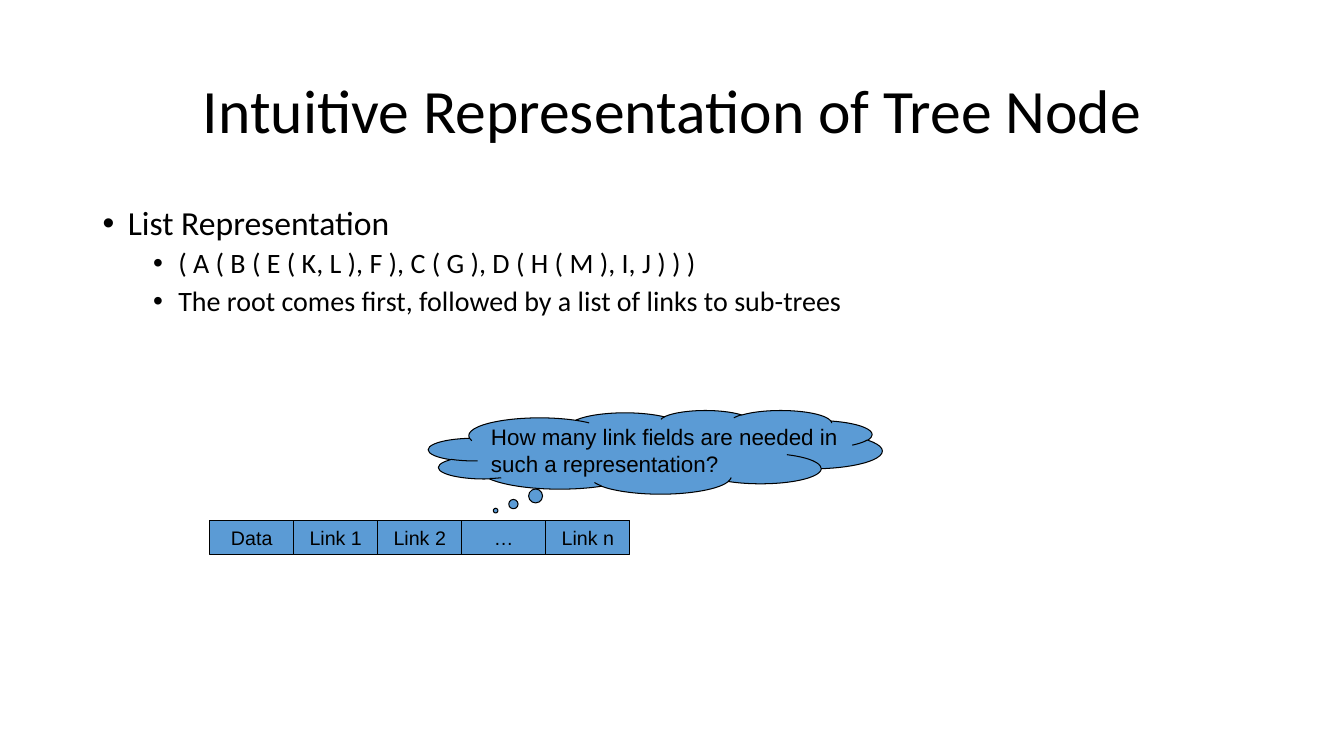
from pptx import Presentation
from pptx.dml.color import RGBColor
from pptx.enum.shapes import MSO_SHAPE
from pptx.enum.text import MSO_ANCHOR, PP_ALIGN
from pptx.oxml import parse_xml
from pptx.oxml.ns import nsdecls
from pptx.util import Inches, Pt


def color(hex_code):
    """Turn a hex string into a colour."""
    return RGBColor.from_string(hex_code)


def write(paragraph, text, font="Calibri", size=14, ink="000000", align=PP_ALIGN.LEFT,
          line_spacing=1.0, before=0):
    """Put formatted text into a paragraph."""
    paragraph.alignment = align
    paragraph.line_spacing = line_spacing
    paragraph.space_before = Pt(before)
    run = paragraph.add_run()
    run.text = text
    run.font.name = font
    run.font.size = Pt(size)
    run.font.color.rgb = color(ink)


class NodeSlide:
    """Hold the style and the current slide."""

    fill = "5B9BD5"
    outline = "000000"
    label_font = "Arial"

    def __init__(self, presentation):
        """Add a title-only slide."""
        self.slide = presentation.slides.add_slide(presentation.slide_layouts[5])

    def title(self, text, left, top, width, height):
        """Place and format the title."""
        heading = self.slide.shapes.title
        heading.left, heading.top = Inches(left), Inches(top)
        heading.width, heading.height = Inches(width), Inches(height)
        heading.text_frame.vertical_anchor = MSO_ANCHOR.MIDDLE
        write(heading.text_frame.paragraphs[0], text, size=44,
              align=PP_ALIGN.CENTER, line_spacing=0.9)

    def bullets(self, items, left, top, width, height):
        """Add a bulleted list of (level, text) items."""
        frame = self.slide.shapes.add_textbox(
            Inches(left), Inches(top), Inches(width), Inches(height)).text_frame
        frame.word_wrap = True
        for index, (level, text) in enumerate(items):
            item = frame.add_paragraph() if index else frame.paragraphs[0]
            item.level = level
            write(item, text, size=24 - 4 * level, line_spacing=0.9, before=10 - 5 * level)
            properties = item._p.get_or_add_pPr()
            properties.set("marL", str(Inches(0.25 + 0.5 * level)))
            properties.set("indent", str(Inches(-0.25)))
            properties.append(parse_xml(f'<a:buFont {nsdecls("a")} typeface="Arial"/>'))
            properties.append(parse_xml(f'<a:buChar {nsdecls("a")} char="•"/>'))

    def box(self, preset, lines, left, top, width, height, size, align):
        """Add an outlined shape with text lines."""
        shape = self.slide.shapes.add_shape(
            preset, Inches(left), Inches(top), Inches(width), Inches(height))
        shape.shadow.inherit = False
        shape.fill.solid()
        shape.fill.fore_color.rgb = color(self.fill)
        shape.line.color.rgb = color(self.outline)
        shape.line.width = Pt(0.75)
        frame = shape.text_frame
        frame.vertical_anchor = MSO_ANCHOR.MIDDLE
        for index, text in enumerate(lines):
            line = frame.add_paragraph() if index else frame.paragraphs[0]
            write(line, text, font=self.label_font, size=size, align=align)
        return shape

    def thought(self, lines, left, top, width, height, tail):
        """Add a thought cloud whose tail points to an offset."""
        cloud = self.box(MSO_SHAPE.CLOUD_CALLOUT, lines, left, top, width, height,
                         16, PP_ALIGN.LEFT)
        cloud.adjustments[0], cloud.adjustments[1] = tail
        frame = cloud.text_frame
        frame.word_wrap = False
        frame.margin_left = frame.margin_right = frame.margin_top = frame.margin_bottom = 0

    def fields(self, labels, left, top, width, height):
        """Add a row of adjoining node fields."""
        for index, label in enumerate(labels):
            self.box(MSO_SHAPE.RECTANGLE, [label], left + index * width, top, width, height,
                     14, PP_ALIGN.CENTER)


def main():
    """Build and save the slide."""
    presentation = Presentation()
    presentation.slide_width, presentation.slide_height = Inches(13.33), Inches(7.5)
    node = NodeSlide(presentation)
    node.title("Intuitive Representation of Tree Node", 0.92, 0.4, 11.5, 1.45)
    node.bullets([
        (0, "List Representation"),
        (1, "( A ( B ( E ( K, L ), F ), C ( G ), D ( H ( M ), I, J ) ) )"),
        (1, "The root comes first, followed by a list of links to sub-trees"),
    ], 0.92, 2, 11.5, 4.76)
    node.thought(["How many link fields are needed in", "such a representation?"],
                 4.25, 4.07, 4.5, 0.83, (-0.352, 0.7))
    node.fields(["Data", "Link 1", "Link 2", "…", "Link n"], 2.08, 5.16, 5 / 6, 0.34)
    presentation.save("out.pptx")


if __name__ == "__main__":
    main()
